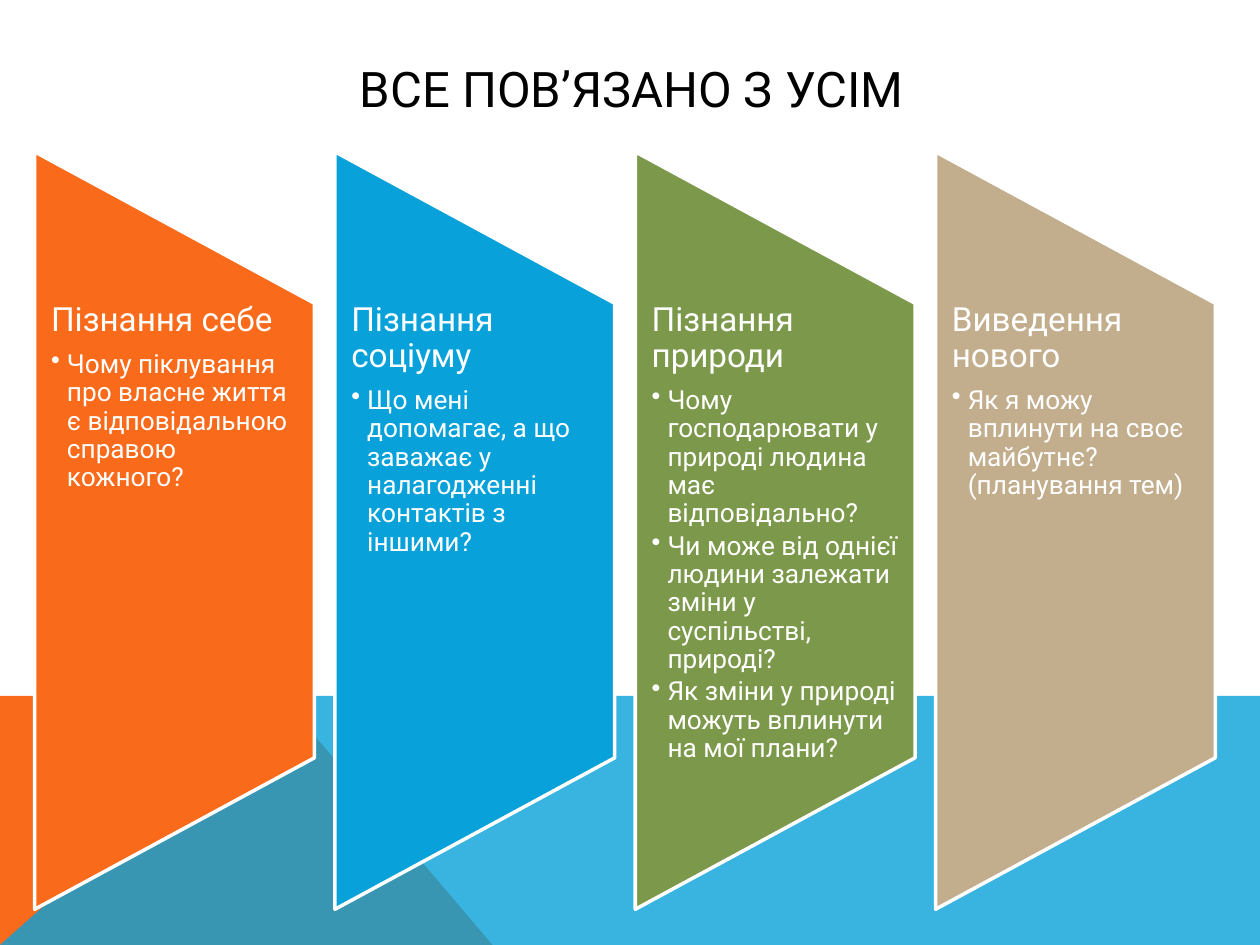
from lxml.etree import SubElement
from pptx import Presentation
from pptx.dml.color import RGBColor
from pptx.enum.shapes import MSO_SHAPE as Shape
from pptx.enum.text import MSO_ANCHOR as Anchor, PP_ALIGN as Align
from pptx.oxml.ns import qn
from pptx.util import Cm, Pt

FONT = "Roboto"
WIDTH, HEIGHT = 25.4, 19.05
COLORS = {
    "orange": "F96A1B",
    "blue": "08A1D9",
    "green": "7C984A",
    "sand": "C2AD8D",
    "white": "FFFFFF",
    "black": "000000",
}
BANNERS = [
    ("orange", "Пізнання себе",
     ["Чому піклування про власне життя є відповідальною справою кожного?"]),
    ("blue", "Пізнання соціуму",
     ["Що мені допомагає, а що заважає у налагодженні контактів з іншими?"]),
    ("green", "Пізнання природи",
     ["Чому господарювати у природі людина має відповідально?",
      "Чи може від однієї людини залежати зміни у суспільстві, природі?",
      "Як зміни у природі можуть вплинути на мої плани?"]),
    ("sand", "Виведення нового",
     ["Як я можу вплинути на своє майбутнє? (планування тем)"]),
]


def paint(fill, color):
    """Fill solidly with a named colour."""
    fill.solid()
    fill.fore_color.rgb = RGBColor.from_string(COLORS[color])


def add_text_box(slide, left, top, width, height, margin):
    """Add a wrapping text box with side margins only and return its frame."""
    box = slide.shapes.add_textbox(Cm(left), Cm(top), Cm(width), Cm(height))
    frame = box.text_frame
    frame.word_wrap = True
    frame.margin_left = frame.margin_right = Cm(margin)
    frame.margin_top = frame.margin_bottom = 0
    return frame


def write(paragraph, text, size, color):
    """Set the text of a paragraph and format its run."""
    paragraph.text = text
    font = paragraph.runs[0].font
    font.name, font.size = FONT, Pt(size)
    font.color.rgb = RGBColor.from_string(COLORS[color])


def add_bullet(paragraph, indent):
    """Give a paragraph a hanging bullet."""
    properties = paragraph._p.get_or_add_pPr()
    properties.set("marL", str(Cm(indent)))
    properties.set("indent", str(-Cm(indent)))
    SubElement(properties, qn("a:buChar")).set("char", "•")


def add_polygon(slide, points, color, opacity=100):
    """Draw a closed borderless polygon through the given points."""
    corners = [(Cm(x), Cm(y)) for x, y in points]
    builder = slide.shapes.build_freeform(*corners[0])
    builder.add_line_segments(corners[1:], close=True)
    shape = builder.convert_to_shape()
    shape.shadow.inherit = False
    paint(shape.fill, color)
    shape.line.fill.background()
    if opacity < 100:
        fill_color = shape.fill._xPr.find(qn("a:solidFill"))[0]
        SubElement(fill_color, qn("a:alpha")).set("val", str(opacity * 1000))


def add_footer(slide, left, top, width, height):
    """Draw the two overlapping colour fields at the foot of the slide."""
    right, bottom, peak = left + width, top + height, left + 5.66
    add_polygon(slide, [(left, bottom), (left, top), (peak, top),
                        (left + 9.93, bottom)], "orange")
    add_polygon(slide, [(left, bottom), (peak, top), (right, top),
                        (right, bottom)], "blue", 80)


def add_title(slide, left, top, width, height):
    """Write the centred slide title."""
    frame = add_text_box(slide, left, top, width, height, 0.25)
    frame.vertical_anchor = Anchor.MIDDLE
    paragraph = frame.paragraphs[0]
    paragraph.alignment = Align.CENTER
    write(paragraph, "ВСЕ ПОВ’ЯЗАНО З УСІМ", 28, "black")


def add_banner(slide, left, top, width, height, color, heading, questions):
    """Draw one upright banner with its heading and bulleted questions."""
    shape = slide.shapes.add_shape(
        Shape.FLOWCHART_MANUAL_OPERATION,
        Cm(left + (width - height) / 2), Cm(top + (height - width) / 2),
        Cm(height), Cm(width))
    shape.rotation = 270
    shape.shadow.inherit = False
    paint(shape.fill, color)
    paint(shape.line.fill, "white")
    shape.line.width = Pt(2)

    frame = add_text_box(slide, left, top + height / 5, width, height * 3 / 5, 0.33)
    paragraph = frame.paragraphs[0]
    write(paragraph, heading, 19, "white")
    paragraph.line_spacing, paragraph.space_after = 0.9, Pt(6.65)
    for question in questions:
        paragraph = frame.add_paragraph()
        write(paragraph, question, 15, "white")
        paragraph.level = 1
        paragraph.line_spacing, paragraph.space_after = 0.9, Pt(2.25)
        add_bullet(paragraph, 0.32)


def add_banners(slide, left, top, width, height):
    """Spread the banners evenly over the given box."""
    banner_width = 5.64
    pitch = (width - banner_width) / (len(BANNERS) - 1)
    for index, banner in enumerate(BANNERS):
        add_banner(slide, left + index * pitch, top, banner_width, height, *banner)


def main():
    """Build and save the slide."""
    presentation = Presentation()
    presentation.slide_width, presentation.slide_height = Cm(WIDTH), Cm(HEIGHT)
    slide = presentation.slides.add_slide(presentation.slide_layouts[6])
    add_footer(slide, 0, 14.03, WIDTH, HEIGHT - 14.03)
    add_title(slide, 2.29, 1.02, 20.88, 1.52)
    add_banners(slide, 0.7, 3.06, 23.8, 15.27)
    presentation.save("out.pptx")


if __name__ == "__main__":
    main()
